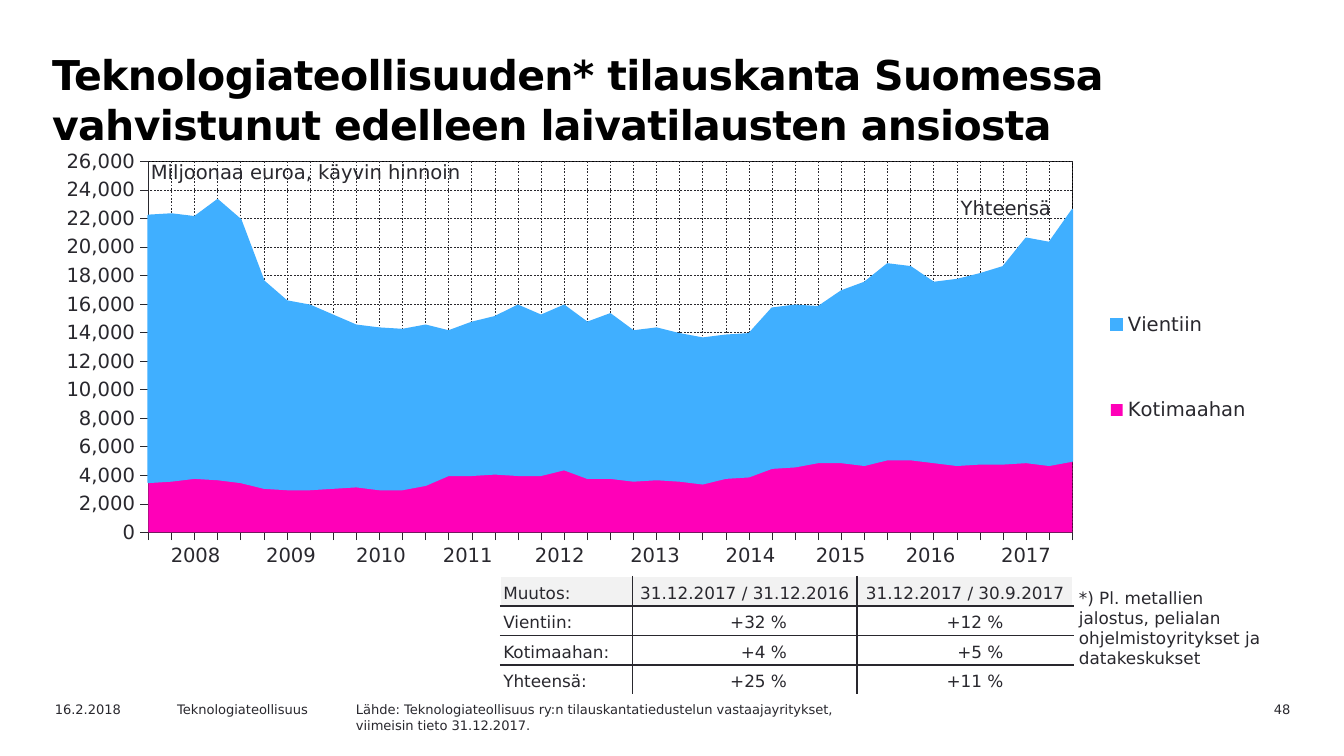
from lxml import etree
from pptx import Presentation
from pptx.chart.data import CategoryChartData
from pptx.dml.color import RGBColor
from pptx.enum.chart import XL_CHART_TYPE, XL_LEGEND_POSITION, XL_TICK_LABEL_POSITION, XL_TICK_MARK
from pptx.enum.dml import MSO_LINE
from pptx.enum.text import MSO_ANCHOR, PP_ALIGN
from pptx.oxml import parse_xml
from pptx.oxml.ns import nsdecls, qn
from pptx.util import Inches, Pt

AREA = XL_CHART_TYPE.AREA_STACKED
LEGEND_RIGHT = XL_LEGEND_POSITION.RIGHT
NO_LABELS = XL_TICK_LABEL_POSITION.NONE
TICK_OUTSIDE, TICK_NONE = XL_TICK_MARK.OUTSIDE, XL_TICK_MARK.NONE
DASH = MSO_LINE.DASH
LEFT, CENTER, RIGHT = PP_ALIGN.LEFT, PP_ALIGN.CENTER, PP_ALIGN.RIGHT
BOTTOM = MSO_ANCHOR.BOTTOM

# The slide is a grid of 100 columns by 56.25 rows of square units.
COLUMNS, ROWS, UNIT = 100, 56.25, Inches(0.1)
FONT = "DejaVu Sans"
INK, WHITE, HEADER_FILL = "29282E", "FFFFFF", "F2F2F2"
PLAIN_TABLE_STYLE = "{2D5ABB26-0587-4C30-8999-92F81FD0307C}"

LABELLED_QUARTERS = 38
ORDERS = [
    ("Kotimaahan", "FF00B8", [
        3500, 3600, 3800, 3700, 3500, 3100, 3000, 3000, 3100, 3200, 3000, 3000, 3300, 4000,
        4000, 4100, 4000, 4000, 4400, 3800, 3800, 3600, 3700, 3600, 3400, 3800, 3900, 4500,
        4600, 4900, 4900, 4700, 5100, 5100, 4900, 4700, 4800, 4800, 4900, 4700, 5000]),
    ("Vientiin", "40AFFF", [
        18700, 18700, 18300, 19600, 18400, 14500, 13200, 12900, 12100, 11300, 11300, 11200,
        11200, 10100, 10700, 11000, 11900, 11200, 11500, 10900, 11500, 10500, 10600, 10300,
        10200, 10000, 10000, 11200, 11300, 10900, 12000, 12800, 13700, 13500, 12600, 13000,
        13300, 13800, 15700, 15600, 17600]),
]
CHANGES = [
    ["Muutos:", "31.12.2017 / 31.12.2016", "31.12.2017 / 30.9.2017"],
    ["Vientiin:", "+32 %", "+12 %"],
    ["Kotimaahan:", "+4 %", "+5 %"],
    ["Yhteensä:", "+25 %", "+11 %"],
]


def color(hex_string):
    return RGBColor.from_string(hex_string)


def units(*lengths):
    return [round(length * UNIT) for length in lengths]


def style_font(font, size, hex_string=INK, bold=False):
    font.name, font.size, font.bold = FONT, Pt(size), bold
    font.color.rgb = color(hex_string)


def style_line(line, hex_string, width, dash=None):
    line.color.rgb = color(hex_string)
    line.width = Pt(width)
    if dash:
        line.dash_style = dash


def add_text(page, box, lines, size, align=LEFT):
    frame = page.shapes.add_textbox(*units(*box)).text_frame
    frame.word_wrap = True
    frame.text = "\n".join(lines)
    for para in frame.paragraphs:
        para.alignment = align
        style_font(para.font, size)
    return frame


def add_title(page, box):
    title = "Teknologiateollisuuden* tilauskanta Suomessa vahvistunut edelleen laivatilausten ansiosta"
    para = add_text(page, box, [title], 22).paragraphs[0]
    para.line_spacing = Pt(27)
    style_font(para.font, 22, "000000", True)
    para.runs[0].font._element.set("spc", "-34")


def set_layout(parent, index, x, y, w, h, inner=False):
    """Place a chart part by shares of the chart's size."""
    old = parent.find(qn("c:layout"))
    if old is not None:
        parent.remove(old)
    target = '<c:layoutTarget val="inner"/>' if inner else ""
    parent.insert(index, parse_xml(
        f'<c:layout {nsdecls("c")}><c:manualLayout>{target}'
        '<c:xMode val="edge"/><c:yMode val="edge"/>'
        f'<c:x val="{x}"/><c:y val="{y}"/><c:w val="{w}"/><c:h val="{h}"/>'
        '</c:manualLayout></c:layout>'))


def add_orders_chart(page, box):
    data = CategoryChartData(number_format="#,##0")
    data.categories = [str(i + 1) for i in range(LABELLED_QUARTERS)]
    for name, _, values in ORDERS:
        data.add_series(name, values)
    chart = page.shapes.add_chart(AREA, *units(*box), data).chart
    chart.has_title = False
    style_font(chart.font, 10.5)
    chart.plots[0].vary_by_categories = False

    for series, (_, fill, _) in zip(chart.plots[0].series, ORDERS):
        series.format.fill.solid()
        series.format.fill.fore_color.rgb = color(fill)
        series.format.line.fill.background()
    style_line(series.format.line, fill, 0.88)

    for axis in (chart.category_axis, chart.value_axis):
        axis.has_major_gridlines = True
        style_line(axis.major_gridlines.format.line, INK, 0.25, DASH)
        style_line(axis.format.line, INK, 0.22)
        axis.major_tick_mark, axis.minor_tick_mark = TICK_OUTSIDE, TICK_NONE
    chart.category_axis.tick_label_position = NO_LABELS
    scale = chart.value_axis
    scale.minimum_scale, scale.maximum_scale, scale.major_unit = 0, 26000, 2000
    scale.tick_labels.number_format = "#,##0"
    scale.tick_labels.number_format_is_linked = False
    style_font(scale.tick_labels.font, 10.5)
    scale._element.find(qn("c:crossBetween")).set("val", "midCat")

    plot_area = chart._chartSpace.chart.plotArea
    set_layout(plot_area, 0, 0.075, 0.029, 0.749, 0.885, inner=True)
    plot_area.append(parse_xml(
        f'<c:spPr {nsdecls("c", "a")}><a:noFill/><a:ln w="9525"><a:solidFill>'
        '<a:srgbClr val="000000"/></a:solidFill></a:ln></c:spPr>'))

    chart.has_legend = True
    chart.legend.position = LEGEND_RIGHT
    chart.legend.include_in_layout = False
    style_font(chart.legend.font, 10.5)
    set_layout(chart.legend._element, 1, 0.85, 0.24, 0.12, 0.56)


def add_plain_table(page, box, texts, widths, size):
    table = page.shapes.add_table(len(texts), len(widths), *units(*box)).table
    table.first_row = table.horz_banding = False
    table._tbl.tblPr.find(qn("a:tableStyleId")).text = PLAIN_TABLE_STYLE
    for column, width in zip(table.columns, units(*widths)):
        column.width = width
    for r, row in enumerate(texts):
        for c, text in enumerate(row):
            cell = table.cell(r, c)
            cell.text = text
            cell.fill.background()
            cell.text_frame.paragraphs[0].alignment = CENTER
            style_font(cell.text_frame.paragraphs[0].font, size)
    return table


def set_borders(cell, sides):
    """Draw 1 pt borders; sides maps L, R, T and B, in that order, to colours."""
    properties = cell._tc.get_or_add_tcPr()
    for index, (side, hex_string) in enumerate(sides.items()):
        line = etree.Element(qn(f"a:ln{side}"), w="12700")
        fill = etree.SubElement(line, qn("a:solidFill"))
        etree.SubElement(fill, qn("a:srgbClr"), val=hex_string)
        properties.insert(index, line)


def add_change_table(page, box):
    table = add_plain_table(page, box, CHANGES, [9.8, 16.7, 16.1], 9)
    last_row, last_column = len(CHANGES) - 1, len(CHANGES[0]) - 1
    for r in range(last_row + 1):
        table.rows[r].height = units(box[3] / len(CHANGES))[0]
        for c in range(last_column + 1):
            cell = table.cell(r, c)
            cell.vertical_anchor = BOTTOM
            cell.margin_left = cell.margin_right = Inches(0.02)
            cell.margin_top = cell.margin_bottom = Inches(0.02)
            para = cell.text_frame.paragraphs[0]
            if c == 0:
                para.alignment = LEFT
            elif r > 0:
                para.alignment = RIGHT
                cell.margin_right = Inches(0.52)
            cell.fill.solid()
            cell.fill.fore_color.rgb = color(WHITE if r else HEADER_FILL)
            inside = {"L": c > 0, "R": c < last_column, "T": r > 0, "B": r < last_row}
            set_borders(cell, {side: INK if dark else WHITE for side, dark in inside.items()})


def add_footer(page, top):
    add_text(page, (87.6, top, 9.4, 1.8), ["48"], 7, RIGHT)
    add_text(page, (3.1, top, 10, 1.8), ["16.2.2018"], 7)
    add_text(page, (12.2, top, 14.2, 1.8), ["Teknologiateollisuus"], 7)
    add_text(page, (25.5, top, 50, 2.6), [
        "Lähde: Teknologiateollisuus ry:n tilauskantatiedustelun vastaajayritykset,",
        "viimeisin tieto 31.12.2017."], 7)


def main():
    deck = Presentation()
    deck.slide_width, deck.slide_height = units(COLUMNS, ROWS)
    page = deck.slides.add_slide(deck.slide_layouts[6])
    add_title(page, (2.9, 3.1, 87.3, 7.1))
    add_footer(page, 51.7)
    add_orders_chart(page, (4.15, 11.1, 91.8, 31.2))
    years = [str(year) for year in range(2008, 2018)]
    add_plain_table(page, (11, 40, 68.9, 2.5), [years],
                    [7.1, 7.1, 6.3, 6.6, 7.1, 7.1, 7.1, 6.3, 7.1, 7.1], 10.5)
    add_text(page, (10.25, 11.4, 26, 2.7), ["Miljoonaa euroa, käyvin hinnoin"], 10.5)
    add_change_table(page, (37.25, 42.9, 42.7, 8.8))
    add_text(page, (79.3, 43.2, 16.6, 7.1), [
        "*) Pl. metallien jalostus, pelialan ohjelmistoyritykset ja datakeskukset"], 9)
    add_text(page, (70.5, 14.1, 10.6, 2.7), ["Yhteensä"], 10.5)
    deck.save("out.pptx")


if __name__ == "__main__":
    main()
